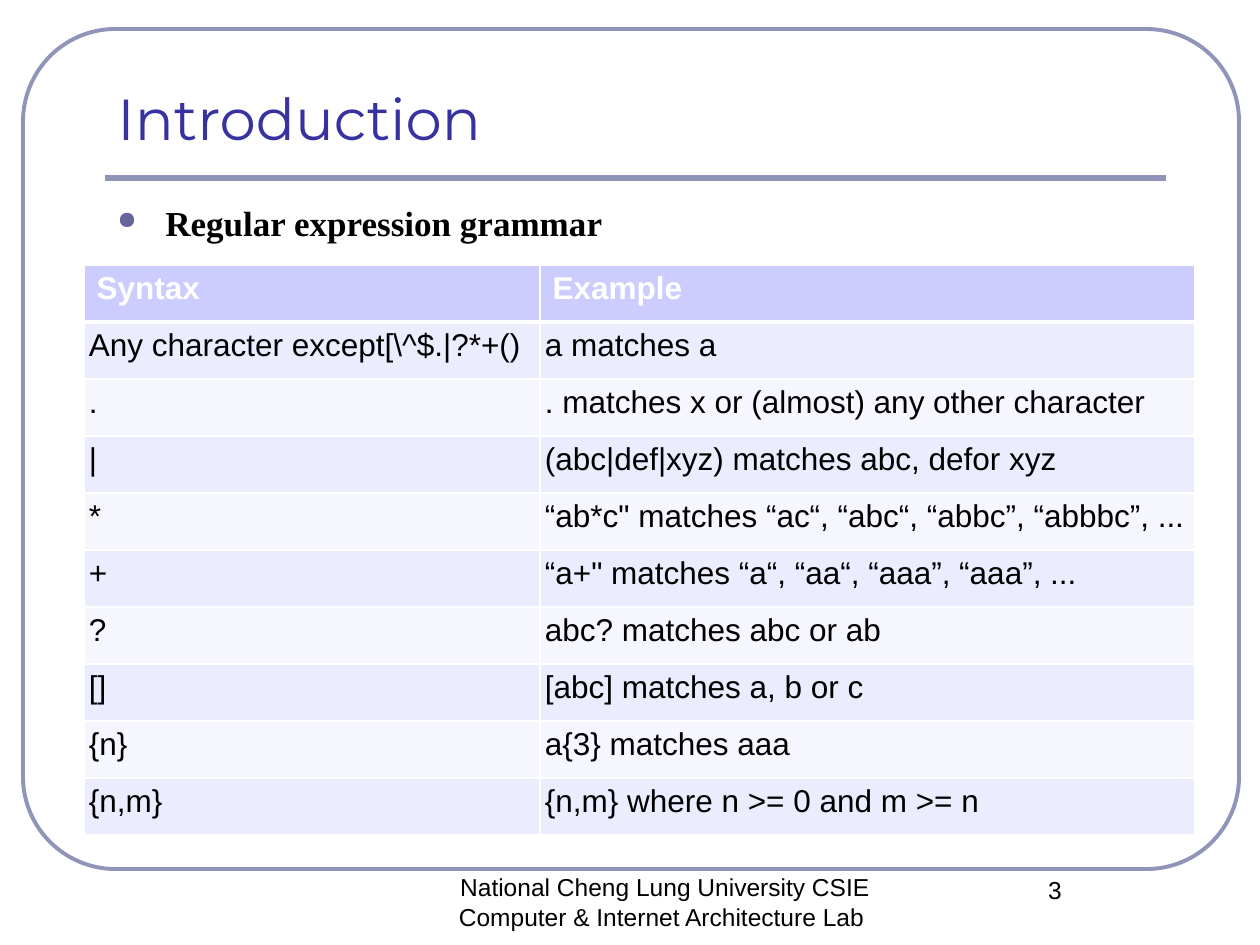
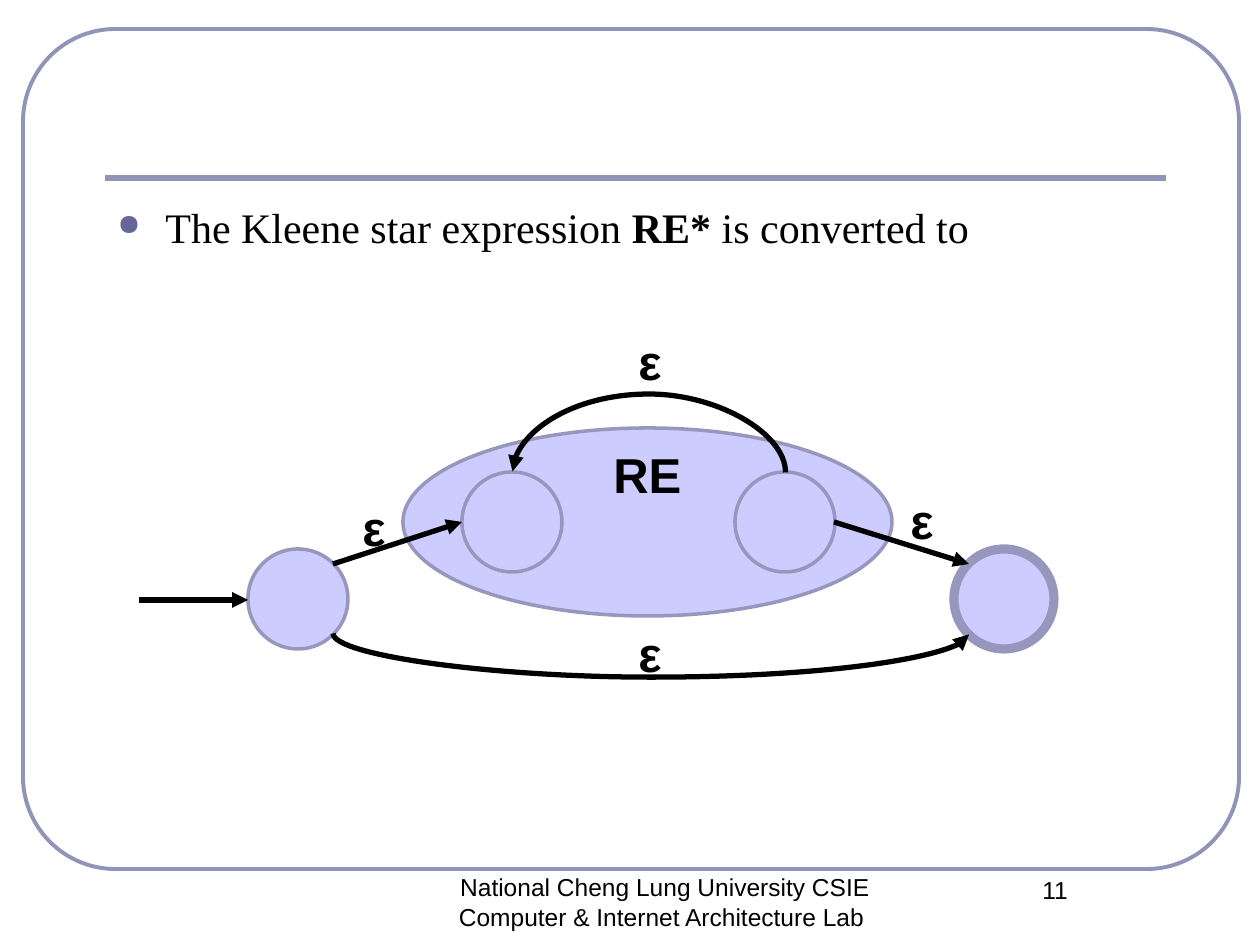
from pptx import Presentation
from pptx import util as u
from pptx.dml.color import RGBColor
from pptx.enum import shapes, text
from pptx.oxml.ns import qn
from lxml import etree

PX = 914400 / 126
BLACK = RGBColor(0x00, 0x00, 0x00)
WHITE = RGBColor(0xFF, 0xFF, 0xFF)
FRAME = RGBColor(0x90, 0x94, 0xB8)
TITLE = RGBColor(0x37, 0x32, 0xA0)
BULLET = RGBColor(0x66, 0x66, 0x99)
LILAC = RGBColor(0xCC, 0xCC, 0xFF)
RING = RGBColor(0x97, 0x97, 0xBD)
BAND_DARK = RGBColor(0xEC, 0xEC, 0xFF)
BAND_LIGHT = RGBColor(0xF6, 0xF6, 0xFF)
SANS, SERIF, DISPLAY = "Arial", "Times New Roman", "Montserrat"
FOOTER = "National Cheng Lung University CSIE Computer & Internet Architecture Lab "
STATE = 100

GRAMMAR = [
    ("Syntax", "Example"),
    ("Any character except[\\^$.|?*+()", "a matches a"),
    (".", ". matches x or (almost) any other character"),
    ("|", "(abc|def|xyz) matches abc, defor xyz"),
    ("*", "“ab*c\" matches “ac“, “abc“, “abbc”, “abbbc”, ..."),
    ("+", "“a+\" matches “a“, “aa“, “aaa”, “aaa”, ..."),
    ("?", "abc? matches abc or ab"),
    ("[]", "[abc] matches a, b or c"),
    ("{n}", "a{3} matches aaa"),
    ("{n,m}", "{n,m} where n >= 0 and m >= n"),
]


def px(*values):
    return [u.Emu(round(v * PX)) for v in values]


def add_run(p, words, size, font=SANS, color=BLACK, bold=False):
    r = p.add_run()
    r.text = words
    r.font.size = u.Pt(size)
    r.font.name = font
    r.font.color.rgb = color
    r.font.bold = bold


def add_text(s, box, wrap=True, anchor=text.MSO_ANCHOR.TOP, align=text.PP_ALIGN.LEFT):
    tf = s.shapes.add_textbox(*px(*box)).text_frame
    tf.word_wrap = wrap
    tf.vertical_anchor = anchor
    p = tf.paragraphs[0]
    p.alignment = align
    return p


def add_outline(s, kind, box, line, width, fill=None):
    sp = s.shapes.add_shape(kind, *px(*box))
    sp.shadow.inherit = False
    if fill is None:
        sp.fill.background()
    else:
        sp.fill.solid()
        sp.fill.fore_color.rgb = fill
    sp.line.color.rgb = line
    sp.line.width = u.Pt(width)
    return sp


def add_line(s, ends, color=BLACK, arrow=True, kind=shapes.MSO_CONNECTOR.STRAIGHT):
    cx = s.shapes.add_connector(kind, *px(*ends))
    cx.line.color.rgb = color
    cx.line.width = u.Pt(3)
    if arrow:
        etree.SubElement(cx.line._get_or_add_ln(), qn("a:tailEnd"), type="triangle")
    etree.SubElement(cx._element.spPr, qn("a:effectLst"))
    return cx


def add_arc(s, mid_x, mid_y, span, depth, flip):
    left, top = mid_x - 0.5, mid_y - span / 2
    cx = add_line(s, (left, top, left + 1, top + span), kind=shapes.MSO_CONNECTOR.CURVE)
    xfrm = cx._element.spPr.find(qn("a:xfrm"))
    xfrm.set("rot", "16200000")
    xfrm.set(flip, "1")
    guides = cx._element.spPr.find(qn("a:prstGeom")).get_or_add_avLst()
    etree.SubElement(guides, qn("a:gd"), name="adj1", fmla=f"val {depth * 100000}")


def add_bullet(s, size, runs):
    p = add_text(s, (105, 195, 1061, 624))
    p.space_before = u.Pt(size * 0.2)
    pPr = p._p.get_or_add_pPr()
    pPr.set("marL", str(px(48)[0]))
    pPr.set("indent", str(px(-48)[0]))
    color = etree.SubElement(pPr, qn("a:buClr"))
    etree.SubElement(color, qn("a:srgbClr"), val=str(BULLET))
    etree.SubElement(pPr, qn("a:buSzPct"), val="70000")
    etree.SubElement(pPr, qn("a:buChar"), char="●")
    for words, bold in runs:
        add_run(p, words, size, SERIF, bold=bold)


def add_slide(prs, number, title=None):
    s = prs.slides.add_slide(prs.slide_layouts[6])
    frame = add_outline(s, shapes.MSO_SHAPE.ROUNDED_RECTANGLE, (23, 29, 1216, 840), FRAME, 2.25)
    frame.adjustments[0] = 0.11
    add_line(s, (105, 178, 1166, 178), FRAME, arrow=False)
    if title:
        p = add_text(s, (105, 76, 1061, 82), anchor=text.MSO_ANCHOR.BOTTOM)
        add_run(p, title, 33, DISPLAY, TITLE)
    for words, box in ((FOOTER, (392, 866, 546, 63)), (number, (945, 869, 220, 63))):
        add_run(add_text(s, box, align=text.PP_ALIGN.CENTER), words, 14)
    return s


def set_borders(cell, **widths):
    tcPr = cell._tc.get_or_add_tcPr()
    for side in "LRTB":
        ln = etree.SubElement(tcPr, qn("a:ln" + side), w=str(u.Pt(widths.get(side, 1))))
        fill = etree.SubElement(ln, qn("a:solidFill"))
        etree.SubElement(fill, qn("a:srgbClr"), val=str(WHITE))


def fill_cell(cell, row, words):
    borders = {0: {"B": 3}, 1: {"T": 3}}.get(row, {})
    set_borders(cell, **borders)
    cell.fill.solid()
    p = cell.text_frame.paragraphs[0]
    if row == 0:
        cell.fill.fore_color.rgb = LILAC
        add_run(p, words, 18, color=WHITE, bold=True)
        return
    cell.fill.fore_color.rgb = BAND_DARK if row % 2 else BAND_LIGHT
    cell.vertical_anchor = text.MSO_ANCHOR.MIDDLE
    cell.margin_left = cell.margin_right = cell.margin_top = cell.margin_bottom = px(5)[0]
    p.line_spacing = u.Pt(15)
    p.space_before = p.space_after = u.Pt(7.5)
    add_run(p, words, 18)


def add_grammar_table(s):
    widths = (456, 655)
    height = 57
    box = px(84, 265, sum(widths), height * len(GRAMMAR))
    table = s.shapes.add_table(len(GRAMMAR), len(widths), *box).table
    for column, width in zip(table.columns, widths):
        column.width = px(width)[0]
    for i, words in enumerate(GRAMMAR):
        table.rows[i].height = px(height)[0]
        for j, word in enumerate(words):
            fill_cell(table.cell(i, j), i, word)


def add_oval(s, box, width=2):
    add_outline(s, shapes.MSO_SHAPE.OVAL, box, RING, width, LILAC)


def add_label(s, x, y, words="ε", width=49):
    add_run(add_text(s, (x, y, width, 72), wrap=False), words, 28, bold=True)


def add_kleene_star(s):
    add_oval(s, (403, 428, 489, 188))
    for x, y, width in ((248, 549, 2), (954, 549, 5.25), (462, 472, 2), (735, 472, 2)):
        add_oval(s, (x, y, STATE, STATE), width)
    for ends in ((139, 600, 248, 600), (333, 564, 462, 522), (834, 522, 969, 564)):
        add_line(s, ends)
    add_arc(s, 651, 634, 636, 44, "flipH")
    add_arc(s, 649, 472, 273, 79, "flipV")
    for x, y in ((350, 491), (898, 484), (626, 617), (626, 325)):
        add_label(s, x, y)
    add_label(s, 601, 438, "RE", 95)


def main():
    prs = Presentation()
    prs.slide_width, prs.slide_height = px(1260, 945)

    s = add_slide(prs, "3", "Introduction")
    add_bullet(s, 20, [("Regular expression grammar", True)])
    add_grammar_table(s)

    s = add_slide(prs, "11")
    add_bullet(s, 24, [("The Kleene star expression ", False), ("RE* ", True),
                       ("is converted to", False)])
    add_kleene_star(s)

    prs.save("out.pptx")


if __name__ == "__main__":
    main()
